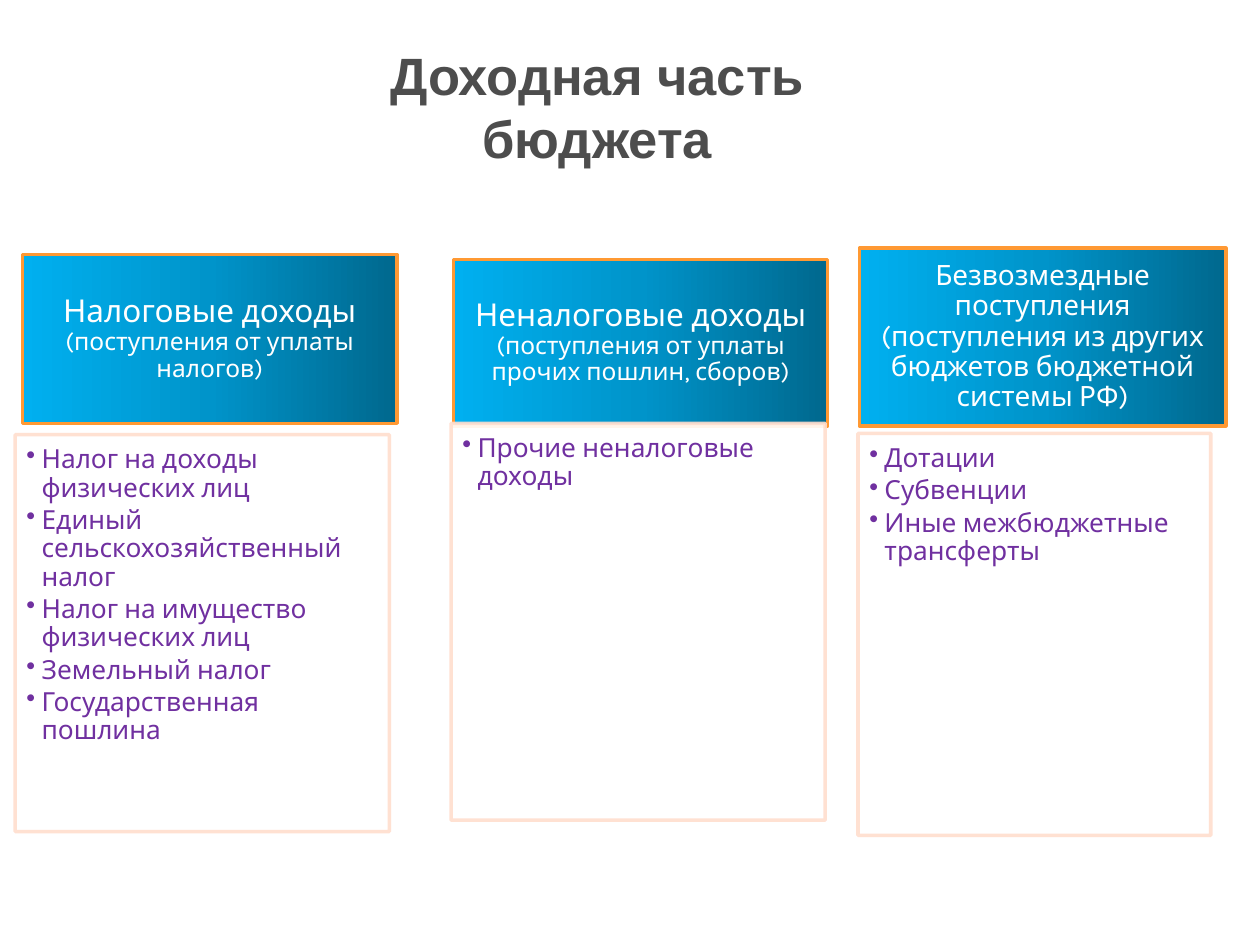
from copy import deepcopy
from dataclasses import dataclass

from lxml.etree import SubElement
from pptx import Presentation
from pptx.dml.color import RGBColor
from pptx.enum.shapes import MSO_SHAPE
from pptx.enum.text import MSO_ANCHOR, PP_ALIGN
from pptx.oxml.ns import qn
from pptx.util import Inches, Pt


@dataclass(frozen=True)
class Theme:
    title_font: str = "Arial"
    body_font: str = "Karla"
    title_color: str = "4D4D4D"
    header_text: str = "FFFFFF"
    header_line: str = "FF9933"
    header_stops: tuple = ((0, "00688E"), (0.5, "0094CA"), (1, "00B0F0"))
    list_text: str = "7030A0"
    list_fill: str = "FFFFFF"
    list_line: str = "FFDECE"
    list_opacity: int = 90
    title_size: int = 30
    list_size: int = 15
    line_width: int = 2
    line_spacing: float = 0.9
    list_gap: float = 2.25


class BudgetSlide:
    def __init__(self, presentation, theme):
        self.theme = theme
        self.slide = presentation.slides.add_slide(presentation.slide_layouts[6])

    def style_font(self, font, name, size, color, bold=False):
        font.name = name
        font.size = Pt(size)
        font.bold = bold
        font.color.rgb = RGBColor.from_string(color)

    def set_insets(self, text_frame, left, top, right, bottom):
        text_frame.word_wrap = True
        text_frame.margin_left = Inches(left)
        text_frame.margin_top = Inches(top)
        text_frame.margin_right = Inches(right)
        text_frame.margin_bottom = Inches(bottom)

    def add_title(self, text, box):
        shape = self.slide.shapes.add_textbox(*map(Inches, box))
        text_frame = shape.text_frame
        text_frame.word_wrap = True
        text_frame.text = text
        paragraph = text_frame.paragraphs[0]
        paragraph.alignment = PP_ALIGN.CENTER
        theme = self.theme
        self.style_font(paragraph.runs[0].font, theme.title_font,
                        theme.title_size, theme.title_color, True)

    def add_rectangle(self, box, line_color):
        shape = self.slide.shapes.add_shape(MSO_SHAPE.RECTANGLE, *map(Inches, box))
        shape.shadow.inherit = False
        shape.line.color.rgb = RGBColor.from_string(line_color)
        shape.line.width = Pt(self.theme.line_width)
        return shape

    def fill_gradient(self, shape):
        shape.fill.gradient()
        shape.fill.gradient_angle = 180
        stop_list = shape._element.spPr.find(qn("a:gradFill")).find(qn("a:gsLst"))
        stop_list.insert(1, deepcopy(stop_list[0]))
        for stop, (position, color) in zip(shape.fill.gradient_stops,
                                           self.theme.header_stops):
            stop.position = position
            stop.color.rgb = RGBColor.from_string(color)

    def add_header(self, box, runs, insets):
        shape = self.add_rectangle(box, self.theme.header_line)
        self.fill_gradient(shape)
        text_frame = shape.text_frame
        self.set_insets(text_frame, *insets)
        text_frame.vertical_anchor = MSO_ANCHOR.MIDDLE
        paragraph = text_frame.paragraphs[0]
        paragraph.alignment = PP_ALIGN.CENTER
        paragraph.line_spacing = self.theme.line_spacing
        for text, size in runs:
            run = paragraph.add_run()
            run.text = text
            self.style_font(run.font, self.theme.body_font, size,
                            self.theme.header_text)

    def add_list(self, box, items):
        theme = self.theme
        shape = self.add_rectangle(box, theme.list_line)
        shape.fill.solid()
        shape.fill.fore_color.rgb = RGBColor.from_string(theme.list_fill)
        for color in shape._element.spPr.iter(qn("a:srgbClr")):
            SubElement(color, qn("a:alpha"), val=str(theme.list_opacity * 1000))
        text_frame = shape.text_frame
        self.set_insets(text_frame, 0.09, 0.09, 0.12, 0.13)
        text_frame.vertical_anchor = MSO_ANCHOR.TOP
        text_frame.text = "\n".join(items)
        for paragraph in text_frame.paragraphs:
            paragraph.alignment = PP_ALIGN.LEFT
            paragraph.line_spacing = theme.line_spacing
            paragraph.space_after = Pt(theme.list_gap)
            properties = paragraph._p.get_or_add_pPr()
            properties.set("marL", str(Inches(0.12)))
            properties.set("indent", str(Inches(-0.12)))
            SubElement(properties, qn("a:buChar"), char="•")
            self.style_font(paragraph.runs[0].font, theme.body_font,
                            theme.list_size, theme.list_text)


WIDE_INSETS = (0.14, 0.08, 0.14, 0.08)
NARROW_INSETS = (0.12, 0.07, 0.12, 0.07)

INCOME_GROUPS = [
    ((0.18, 2.02, 2.97, 1.34),
     [("Налоговые доходы ", 18), ("(поступления от уплаты налогов)", 14)],
     WIDE_INSETS,
     (0.12, 3.45, 2.97, 3.15),
     ["Налог на доходы физических лиц",
      "Единый сельскохозяйственный налог",
      "Налог на имущество физических лиц",
      "Земельный налог",
      "Государственная пошлина"]),
    ((3.6, 2.06, 2.97, 1.32),
     [("Неналоговые доходы ", 18),
      ("(поступления от уплаты прочих пошлин, сборов)", 14)],
     WIDE_INSETS,
     (3.58, 3.36, 2.97, 3.15),
     ["Прочие неналоговые доходы"]),
    ((6.82, 1.97, 2.91, 1.41),
     [("Безвозмездные поступления (поступления из других "
       "бюджетов бюджетной системы РФ)", 16)],
     NARROW_INSETS,
     (6.81, 3.44, 2.8, 3.19),
     ["Дотации", "Субвенции", "Иные межбюджетные трансферты"]),
]


def main():
    presentation = Presentation()
    presentation.slide_width = Inches(10)
    presentation.slide_height = Inches(7.5)
    budget = BudgetSlide(presentation, Theme())
    for header_box, runs, insets, list_box, items in INCOME_GROUPS:
        budget.add_header(header_box, runs, insets)
        budget.add_list(list_box, items)
    budget.add_title("Доходная часть бюджета", (2.24, 0.29, 5, 1.11))
    presentation.save("out.pptx")


if __name__ == "__main__":
    main()
